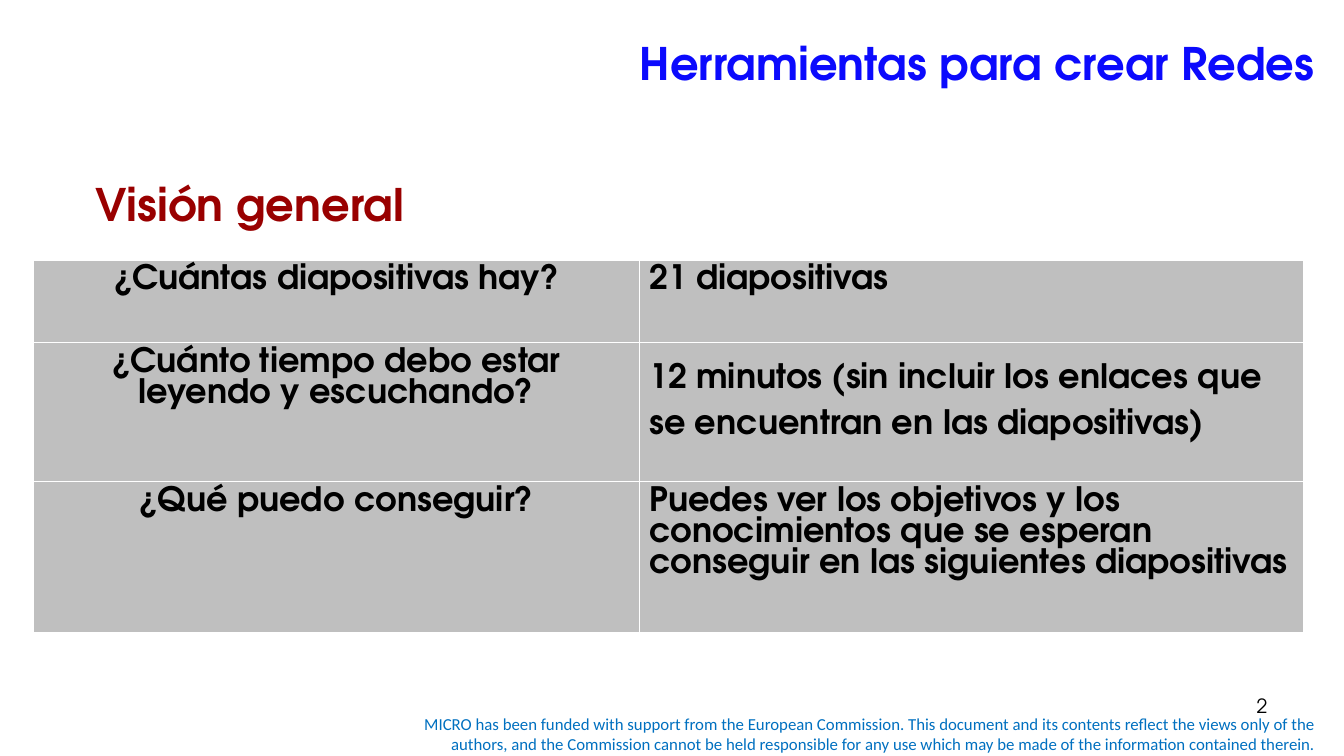
from lxml import etree
from pptx import Presentation
from pptx.dml.color import RGBColor
from pptx.enum.text import MSO_ANCHOR as ANCHOR, PP_ALIGN as ALIGN
from pptx.oxml.ns import qn

PX = 9144  # 100 px to the inch
ADVENTOR = "TeX Gyre Adventor"


def rgb(value):
    return RGBColor.from_string(value)


def write(frame, text, align, font_name, size, color, bold=False):
    frame.word_wrap = True
    line = frame.paragraphs[0]
    line.alignment = align
    run = line.add_run()
    run.text = text
    for key, value in dict(name=font_name, size=size * 12700, bold=bold).items():
        setattr(run.font, key, value)
    run.font.color.rgb = rgb(color)
    return line


deck = Presentation()
deck.slide_width, deck.slide_height = 1333 * PX, 750 * PX
slide = deck.slides.add_slide(deck.slide_layouts[6])

funding = (
    "MICRO has been funded with support from the European Commission. "
    "This document and its contents reflect the views only of the authors, "
    "and the Commission cannot be held responsible for any use which may be "
    "made of the information contained therein."
)
texts = [
    ((375, 703, 940, 50), ANCHOR.MIDDLE, (funding, ALIGN.RIGHT, "Calibri", 12, "0070C0")),
    ((956, 683, 311, 52), ANCHOR.TOP, ("2", ALIGN.RIGHT, ADVENTOR, 14, "000000")),
    ((85, 170, 459, 64), ANCHOR.TOP,
     ("Visión general", ALIGN.LEFT, ADVENTOR, 32, "990000", True)),
    ((114, 0, 1200, 125), ANCHOR.MIDDLE,
     ("Herramientas para crear Redes", ALIGN.RIGHT, ADVENTOR, 32, "0B0AFD", True)),
]
for place, anchor, content in texts:
    frame = slide.shapes.add_textbox(*(n * PX for n in place)).text_frame
    write(frame, *content)
    frame.vertical_anchor = anchor

overview = [
    ("¿Cuántas diapositivas hay?", "21 diapositivas"),
    ("¿Cuánto tiempo debo estar leyendo y escuchando?",
     "12 minutos (sin incluir los enlaces que se encuentran en las diapositivas)"),
    ("¿Qué puedo conseguir?",
     "Puedes ver los objetivos y los conocimientos que se esperan conseguir "
     "en las siguientes diapositivas"),
]
widths, heights = (601, 659), (82, 138, 150)
table = slide.shapes.add_table(
    3, 2, 33 * PX, 258 * PX, sum(widths) * PX, sum(heights) * PX).table
for column, width in zip(table.columns, widths):
    column.width = width * PX
for row, height, answers in zip(table.rows, heights, overview):
    row.height = height * PX
    for cell, text, align in zip(row.cells, answers, (ALIGN.CENTER, ALIGN.LEFT)):
        write(cell.text_frame, text, align, ADVENTOR, 24, "000000", True)
        props = cell._tc.get_or_add_tcPr()
        for side in ("a:lnL", "a:lnR", "a:lnT", "a:lnB"):
            border = etree.SubElement(props, qn(side), w="12700")
            solid = etree.SubElement(border, qn("a:solidFill"))
            etree.SubElement(solid, qn("a:srgbClr"), val="FFFFFF")
        cell.fill.solid()
        cell.fill.fore_color.rgb = rgb("BFBFBF")
table.cell(1, 1).text_frame.paragraphs[0].line_spacing = 1.5

deck.save("out.pptx")
